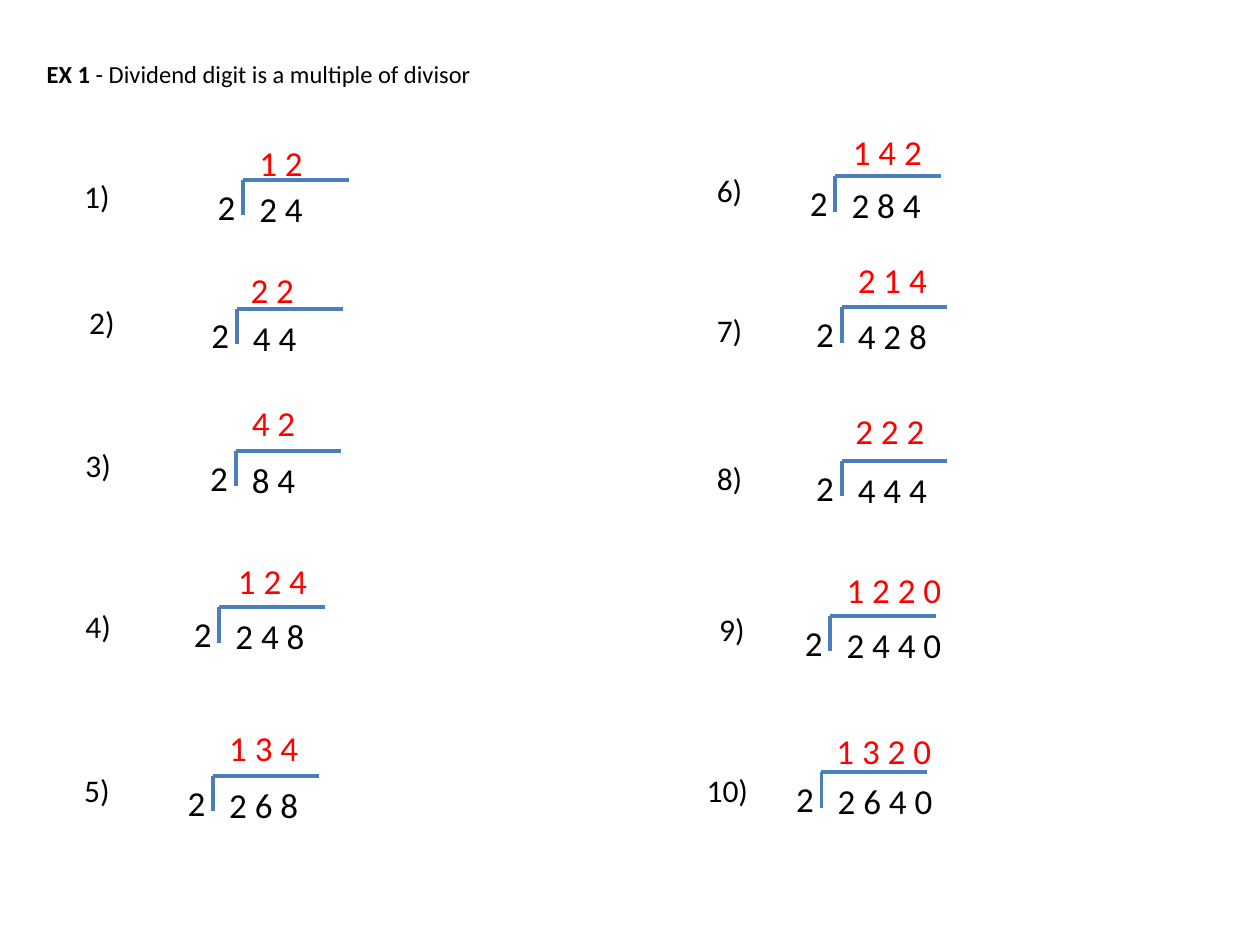
from pptx import Presentation
from pptx.dml.color import RGBColor
from pptx.enum.shapes import MSO_CONNECTOR
from pptx.enum.text import MSO_ANCHOR, MSO_AUTO_SIZE, PP_ALIGN
from pptx.oxml.ns import qn
from pptx.util import Inches, Pt
from lxml import etree

STRAIGHT = MSO_CONNECTOR.STRAIGHT
TOP = MSO_ANCHOR.TOP
GROW = MSO_AUTO_SIZE.SHAPE_TO_FIT_TEXT
LEFT = PP_ALIGN.LEFT

COLORS = {"text": "000000", "answer": "FF0000", "bracket": "4B7EBC"}
TITLE_ONLY = 5
BAR_LENGTH, BAR_DROP = 0.84, 0.28
DIGIT_WIDTH, DIGIT_STEP = 0.36, 0.21

# number, number position, bracket corner, dividend, answer, answer position
PROBLEMS = [
    (1, (0.57, 1.36), (1.93, 1.43), "2 4", "1 2", (1.96, 1.07)),
    (2, (0.61, 2.36), (1.88, 2.45), "4 4", "2 2", (1.89, 2.08)),
    (3, (0.58, 3.49), (1.87, 3.58), "8 4", "4 2", (1.90, 3.14)),
    (4, (0.58, 4.77), (1.74, 4.82), "2 4 8", "1 2 4", (1.79, 4.39)),
    (5, (0.57, 6.07), (1.69, 6.16), "2 6 8", "1 3 4", (1.72, 5.72)),
    (6, (5.59, 1.31), (6.63, 1.40), "2 8 4", "1 4 2", (6.67, 0.99)),
    (7, (5.59, 2.42), (6.68, 2.44), "4 2 8", "2 1 4", (6.71, 2.00)),
    (8, (5.59, 3.59), (6.68, 3.66), "4 4 4", "2 2 2", (6.69, 3.20)),
    (9, (5.61, 4.79), (6.59, 4.89), "2 4 4 0", "1 2 2 0", (6.62, 4.46)),
    (10, (5.51, 6.07), (6.52, 6.13), "2 6 4 0", "1 3 2 0", (6.54, 5.74)),
]


class Worksheet:
    font = "Calibri"

    def __init__(self, slide):
        self.slide = slide

    def style_run(self, run, size, color="text", bold=False):
        run.font.name = self.font
        run.font.size = Pt(size)
        run.font.bold = bold
        run.font.color.rgb = RGBColor.from_string(COLORS[color])

    def title(self, label, description):
        title = self.slide.shapes.title
        title.left, title.top = Inches(0.27), Inches(0.42)
        title.width, title.height = Inches(3.59), Inches(0.34)
        frame = title.text_frame
        frame.word_wrap = False
        frame.auto_size = GROW
        frame.vertical_anchor = TOP
        paragraph = frame.paragraphs[0]
        paragraph.alignment = LEFT
        for text, bold in ((label, True), (description, False)):
            run = paragraph.add_run()
            run.text = text
            self.style_run(run, 14, bold=bold)

    def text(self, shapes, text, left, top, width, height, size, color="text", wrap=False):
        box = shapes.add_textbox(Inches(left), Inches(top), Inches(width), Inches(height))
        frame = box.text_frame
        frame.text = text
        frame.word_wrap = wrap
        frame.auto_size = GROW
        self.style_run(frame.paragraphs[0].runs[0], size, color)

    def digits(self, shapes, text, left, top, color="text"):
        width = DIGIT_WIDTH + DIGIT_STEP * text.count(" ")
        self.text(shapes, text, left, top, width, 0.44, 20, color)

    def line(self, shapes, start, end):
        line = shapes.add_connector(STRAIGHT, *(Inches(value) for value in start + end))
        line.line.color.rgb = RGBColor.from_string(COLORS["bracket"])
        line.line.width = Pt(2.25)
        etree.SubElement(line._element.spPr, qn("a:effectLst"))

    def division(self, corner, divisor, dividend):
        x, y = corner
        shapes = self.slide.shapes.add_group_shape().shapes
        self.line(shapes, (x, y + BAR_DROP), corner)
        self.line(shapes, (x + BAR_LENGTH, y), corner)
        self.digits(shapes, dividend, x + 0.03, y + 0.01)
        self.digits(shapes, divisor, x - 0.3, y - 0.01)

    def number(self, value, position):
        width = 0.42 if value < 10 else 0.7
        self.text(self.slide.shapes, f"{value})", *position, width, 0.4, 18, wrap=True)


def main():
    presentation = Presentation()
    presentation.slide_width, presentation.slide_height = Inches(10), Inches(7.5)
    slide = presentation.slides.add_slide(presentation.slide_layouts[TITLE_ONLY])
    worksheet = Worksheet(slide)

    # Heading
    worksheet.title("EX 1 ", "- Dividend digit is a multiple of divisor")

    # Problems with their answers
    for number, number_at, corner, dividend, answer, answer_at in PROBLEMS:
        worksheet.division(corner, "2", dividend)
        worksheet.number(number, number_at)
        worksheet.digits(slide.shapes, answer, *answer_at, color="answer")

    presentation.save("out.pptx")


if __name__ == "__main__":
    main()
